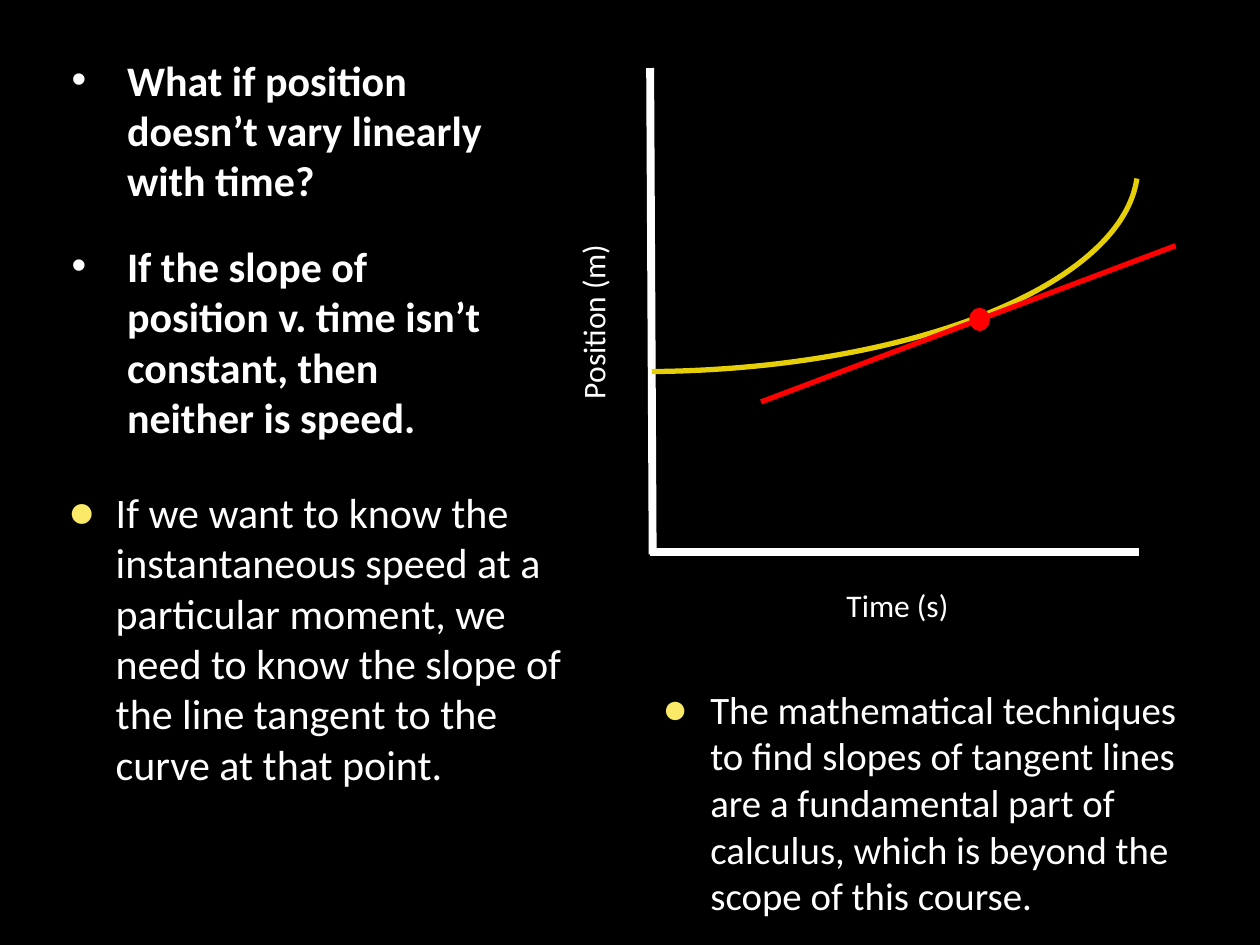
from lxml import etree
from pptx import Presentation
from pptx.dml.color import RGBColor
from pptx.enum import shapes, text
from pptx.oxml.ns import qn
from pptx.util import Inches, Pt

BLACK = RGBColor(0x00, 0x00, 0x00)
WHITE = RGBColor(0xFF, 0xFF, 0xFF)
RED = RGBColor(0xFF, 0x00, 0x00)
GOLD = RGBColor(0xE7, 0xCF, 0x08)
PALE_YELLOW = RGBColor(0xFA, 0xEA, 0x68)
FONT = "Calibri"


def add_span(para, words, size, bold=False):
    span = para.add_run()
    span.text = words
    span.font.name = FONT
    span.font.size = Pt(size)
    span.font.bold = bold
    span.font.color.rgb = WHITE


def add_bullet(para, mark, indent, color, scale):
    props = para._p.get_or_add_pPr()
    props.set("marL", str(Inches(indent)))
    props.set("indent", str(-Inches(indent)))
    holder = etree.SubElement(props, qn("a:buClr"))
    etree.SubElement(holder, qn("a:srgbClr"), val=str(color))
    etree.SubElement(props, qn("a:buSzPct"), val=str(scale * 1000))
    etree.SubElement(props, qn("a:buFont"), typeface="Arial")
    etree.SubElement(props, qn("a:buChar"), char=mark)


def add_bullet_list(page, box, items, size, mark="●", indent=0.38,
                    color=PALE_YELLOW, scale=110, bold=False):
    frame = page.shapes.add_textbox(*map(Inches, box)).text_frame
    frame.word_wrap = True
    for index, item in enumerate(items):
        para = frame.add_paragraph() if index else frame.paragraphs[0]
        add_bullet(para, mark, indent, color, scale)
        if index:
            para.space_before = Pt(20)
        add_span(para, item, size, bold)


def add_line(page, start, end, color, width):
    line = page.shapes.add_connector(
        shapes.MSO_CONNECTOR.STRAIGHT, *map(Inches, (*start, *end)))
    line.line.color.rgb = color
    line.line.width = Pt(width)
    etree.SubElement(line._element.spPr, qn("a:effectLst"))


def add_axis_label(page, box, words, rotation=0):
    label = page.shapes.add_textbox(*map(Inches, box))
    label.rotation = rotation
    frame = label.text_frame
    frame.word_wrap = False
    frame.auto_size = text.MSO_AUTO_SIZE.SHAPE_TO_FIT_TEXT
    add_span(frame.paragraphs[0], words, 18)


def add_outlined(page, kind, box, color, width):
    shape = page.shapes.add_shape(kind, *map(Inches, box))
    shape.shadow.inherit = False
    shape.line.color.rgb = color
    shape.line.width = Pt(width)
    return shape


def add_position_graph(page, box):
    left, top, width, height = box
    right, bottom = left + width, top + height

    # Axes and their labels
    add_line(page, (left, top), (left + 0.02, bottom + 0.02), WHITE, 4.5)
    add_line(page, (right, bottom), (left, bottom), WHITE, 4.5)
    add_axis_label(page, (left - 1.21, top + 1.77, 1.51, 0.4), "Position (m)", 270)
    add_axis_label(page, (left + 1.46, bottom + 0.22, 1.06, 0.4), "Time (s)")

    # Position curve: the lower right quarter of an ellipse
    curve = add_outlined(page, shapes.MSO_SHAPE.ARC,
                         (left - 4.01, top - 0.85, 7.88, 3.26), GOLD, 3)
    curve.fill.background()
    curve.adjustments[0] = 0.853
    curve.adjustments[1] = 52.254

    # Tangent line and the point it touches
    point = add_outlined(page, shapes.MSO_SHAPE.OVAL,
                         (left + 2.55, top + 1.92, 0.13, 0.15), RED, 2.5)
    point.fill.solid()
    point.fill.fore_color.rgb = RED
    add_line(page, (left + 0.88, top + 2.65), (left + 4.17, top + 1.41), RED, 3)


def main():
    deck = Presentation()
    deck.slide_width, deck.slide_height = Inches(10), Inches(7.5)
    page = deck.slides.add_slide(deck.slide_layouts[6])
    page.background.fill.solid()
    page.background.fill.fore_color.rgb = BLACK

    # Opening questions
    add_bullet_list(page, (0.47, 0.38, 3.54, 3.42), [
        "What if position doesn’t vary linearly with time?",
        "If the slope of position v. time isn’t constant, then neither is speed.",
    ], 24, mark="•", indent=0.44, color=WHITE, scale=100, bold=True)

    add_position_graph(page, (5.16, 0.54, 3.88, 3.84))

    # Explanations
    add_bullet_list(page, (0.44, 3.81, 4.31, 3.42), [
        "If we want to know the instantaneous speed at a particular moment, "
        "we need to know the slope of the line tangent to the curve at that point.",
    ], 24)
    add_bullet_list(page, (5.16, 5.39, 4.4, 2), [
        "The mathematical techniques to find slopes of tangent lines are a "
        "fundamental part of calculus, which is beyond the scope of this course.",
    ], 22.2)

    deck.save("out.pptx")


if __name__ == "__main__":
    main()
